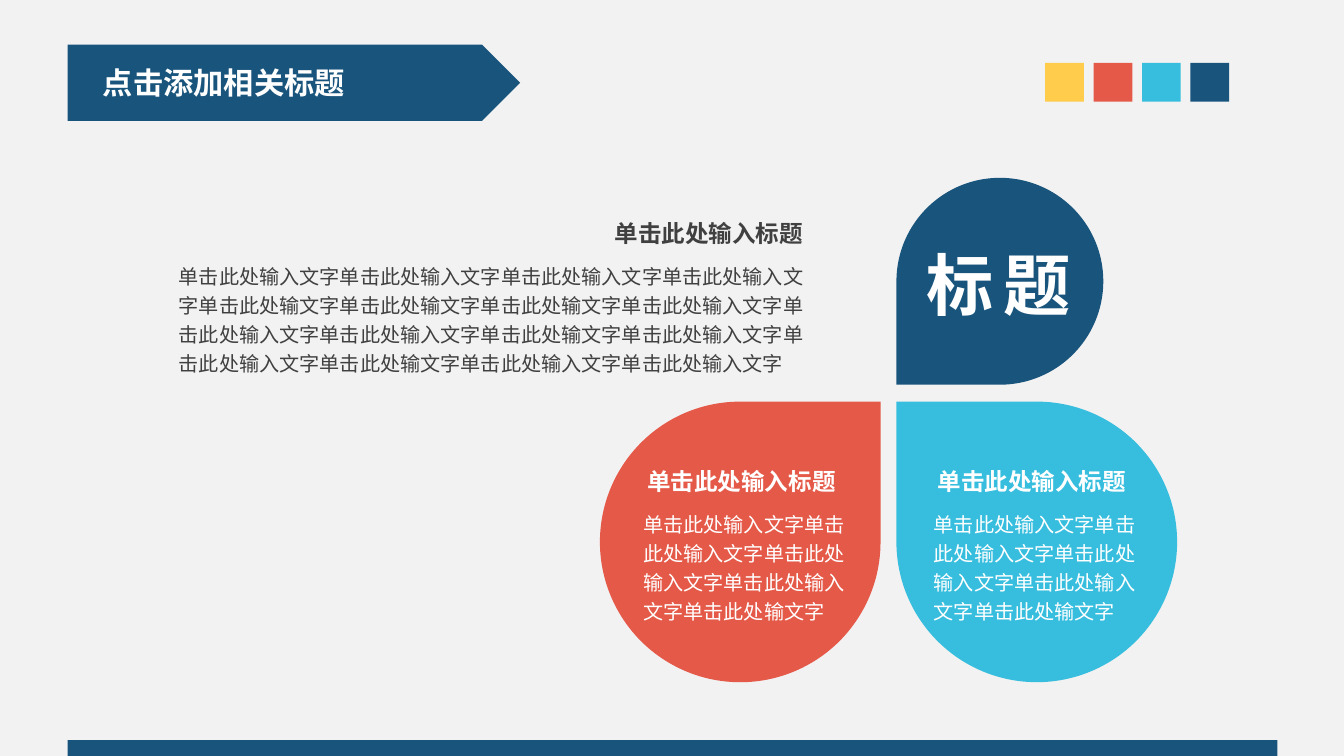
from lxml import etree
from pptx import Presentation
from pptx.dml.color import RGBColor
from pptx.enum.shapes import MSO_SHAPE
from pptx.enum.text import MSO_ANCHOR, MSO_AUTO_SIZE, PP_ALIGN
from pptx.oxml.ns import qn
from pptx.util import Inches, Pt

PENTAGON, RECTANGLE, TEARDROP = MSO_SHAPE.PENTAGON, MSO_SHAPE.RECTANGLE, MSO_SHAPE.TEAR
TOP, MIDDLE = MSO_ANCHOR.TOP, MSO_ANCHOR.MIDDLE
TITLE_ONLY = 5
FONT = "Noto Sans CJK SC"
COLORS = {
    "background": "F2F2F2", "navy": "19547C", "yellow": "FFCC4C",
    "red": "E55948", "cyan": "37BEDE", "gray": "404040", "white": "FFFFFF",
}

TITLE = "点击添加相关标题"
HEADING = "单击此处输入标题"
LONG_BODY = (
    "单击此处输入文字单击此处输入文字单击此处输入文字单击此处输入文字"
    "单击此处输文字单击此处输文字单击此处输文字单击此处输入文字单击此"
    "处输入文字单击此处输入文字单击此处输文字单击此处输入文字单击此处"
    "输入文字单击此处输文字单击此处输入文字单击此处输入文字"
)
SHORT_BODY = "单击此处输入文字单击此处输入文字单击此处输入文字单击此处输入文字单击此处输文字"

# Boxes are left, top, width, height in percent of the slide
TITLE_BOX = (6.75, 7.68, 19.98, 6.4)
BANNER_BOX = (5.04, 5.92, 33.66, 10.08)
FOOTER_BOX = (5.04, 97.92, 90.01, 2.08)
SWATCHES = ("yellow", "red", "cyan", "navy")
SWATCH_BOX = (77.77, 8.32, 2.88, 5.12)
SWATCH_PITCH = 3.6
# Colour, box, rotation of the tip
PETALS = [
    ("navy", (66.7, 23.52, 15.39, 27.36), 180),
    ("cyan", (66.7, 53.12, 20.88, 37.12), 270),
    ("red", (44.64, 53.12, 20.88, 37.12), 0),
]
PETAL_LABEL = ("标题", (68.05, 31.36, 13.41, 12.32))
HEADING_SIZE = (14.76, 6.24)
# Body text, body box, heading corner, colour
TEXT_BLOCKS = [
    (LONG_BODY, (12.42, 33.6, 49.77, 17.12), (45.72, 27.36), "gray"),
    (SHORT_BODY, (46.98, 66.4, 17.19, 17.12), (48.15, 60.16), "white"),
    (SHORT_BODY, (68.59, 66.4, 17.19, 17.12), (69.76, 60.16), "white"),
]

STYLES = {
    "title": {"size": 18, "bold": True},
    "label": {"size": 40, "bold": True, "spacing": 6},
    "heading": {"size": 14, "bold": True, "line": 1.2, "wrap": True,
                "anchor": MIDDLE, "inset": 0},
    "body": {"size": 12, "bold": False, "line": 1.2, "wrap": True},
}

presentation = Presentation()
presentation.slide_width, presentation.slide_height = Inches(11.11), Inches(6.25)
slide = presentation.slides.add_slide(presentation.slide_layouts[TITLE_ONLY])


def rgb(name):
    return RGBColor.from_string(COLORS[name])


def place(box):
    """Turn a box in percent into slide lengths."""
    sides = (presentation.slide_width, presentation.slide_height) * 2
    return [round(side * share / 100) for side, share in zip(sides, box)]


def add_block(kind, box, color, rotation=0):
    shape = slide.shapes.add_shape(kind, *place(box))
    shape.shadow.inherit = False
    shape.fill.solid()
    shape.fill.fore_color.rgb = rgb(color)
    shape.line.fill.background()
    shape.rotation = rotation
    return shape


def write(shape, text, style_name, color):
    style = STYLES[style_name]
    frame = shape.text_frame
    frame.text = text
    frame_format = {
        "word_wrap": style.get("wrap", False),
        "vertical_anchor": style.get("anchor", TOP),
        "auto_size": MSO_AUTO_SIZE.NONE if "anchor" in style
        else MSO_AUTO_SIZE.SHAPE_TO_FIT_TEXT,
    }
    if "inset" in style:
        for side in ("left", "top", "right", "bottom"):
            frame_format[f"margin_{side}"] = style["inset"]
    for name, value in frame_format.items():
        setattr(frame, name, value)

    paragraph = frame.paragraphs[0]
    paragraph.alignment = PP_ALIGN.LEFT
    paragraph.line_spacing = style.get("line", 1.0)
    font = paragraph.runs[0].font
    for name, value in {"size": Pt(style["size"]), "bold": style["bold"], "name": FONT}.items():
        setattr(font, name, value)
    font.color.rgb = rgb(color)
    properties = paragraph.runs[0]._r.get_or_add_rPr()
    etree.SubElement(properties, qn("a:ea"), typeface=FONT)
    if "spacing" in style:
        properties.set("spc", str(style["spacing"] * 100))


def add_text(box, text, style_name, color):
    write(slide.shapes.add_textbox(*place(box)), text, style_name, color)


slide.background.fill.solid()
slide.background.fill.fore_color.rgb = rgb("background")

banner = add_block(PENTAGON, BANNER_BOX, "navy")
title = slide.shapes.title
title.left, title.top, title.width, title.height = place(TITLE_BOX)
write(title, TITLE, "title", "white")
banner.element.addnext(title.element)

add_block(RECTANGLE, FOOTER_BOX, "navy")
swatch_left, *swatch_rest = SWATCH_BOX
for index, color in enumerate(SWATCHES):
    add_block(RECTANGLE, (swatch_left + index * SWATCH_PITCH, *swatch_rest), color)

for color, box, rotation in PETALS:
    add_block(TEARDROP, box, color, rotation)

label, label_box = PETAL_LABEL
add_text(label_box, label, "label", "white")
for body, body_box, heading_corner, color in TEXT_BLOCKS:
    add_text(body_box, body, "body", color)
    add_text(heading_corner + HEADING_SIZE, HEADING, "heading", color)

presentation.save("out.pptx")
